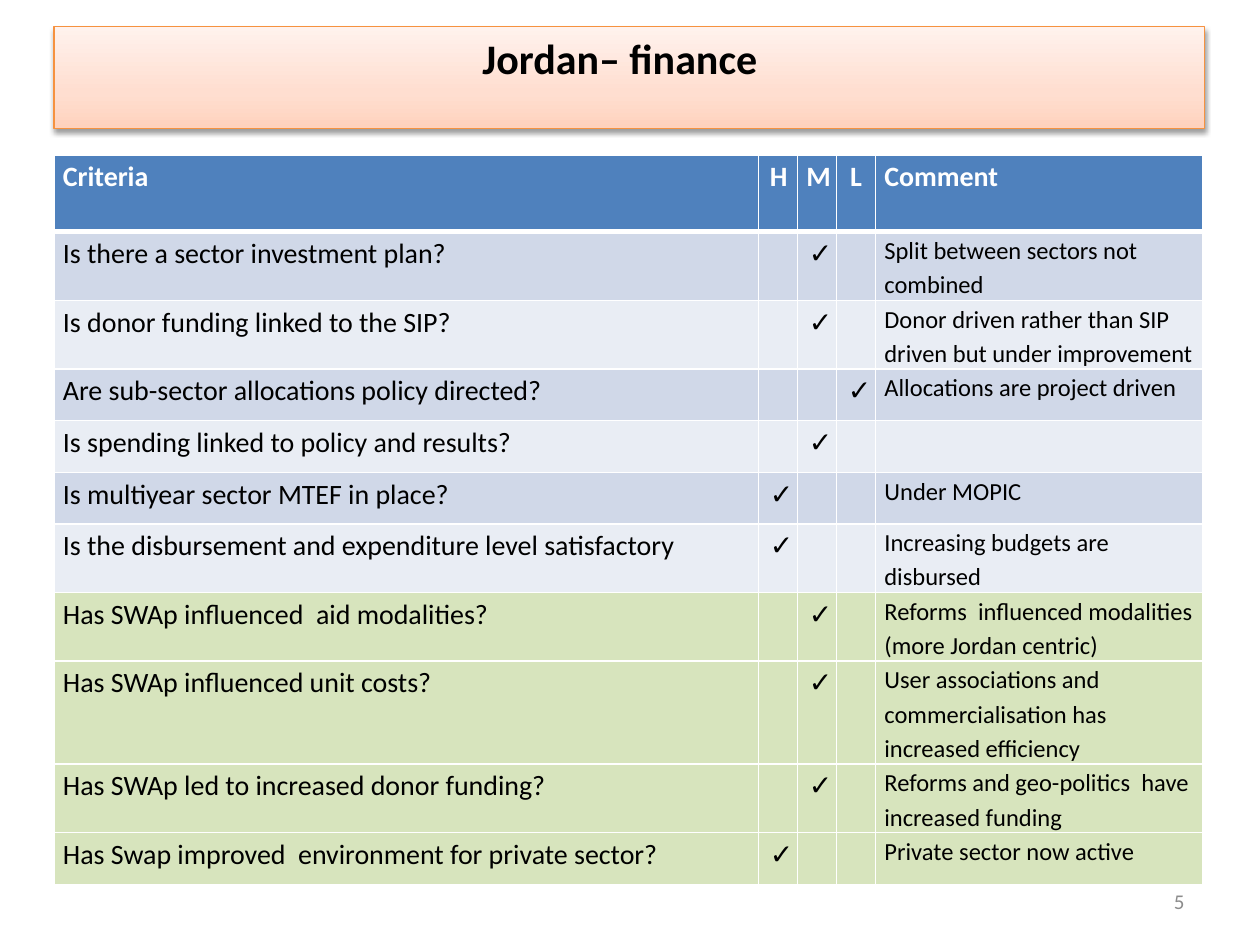
from dataclasses import dataclass
from typing import Optional

from lxml.etree import SubElement
from pptx import Presentation
from pptx.dml.color import RGBColor
from pptx.enum.shapes import MSO_SHAPE
from pptx.enum.text import MSO_ANCHOR, PP_ALIGN
from pptx.oxml import parse_xml
from pptx.oxml.ns import nsdecls, qn
from pptx.util import Inches, Pt

FONT = "Calibri"
BLACK = "000000"
WHITE = "FFFFFF"
HEADER_BLUE = "4F81BD"
BAND_BLUES = ("D0D8E8", "E9EDF4")
SWAP_GREEN = "D7E4BD"
LEVELS = ("H", "M", "L")
LEFT, WIDTH = 0.43, 9.13
COLUMN_WIDTHS = (5.59, 0.31, 0.31, 0.31, 2.6)
HEADER_HEIGHT, ROW_HEIGHT = 0.61, 0.41


@dataclass
class Style:
    size: float
    color: str = BLACK
    bold: bool = False
    alignment: Optional[PP_ALIGN] = None
    margin: float = 0
    indent: float = 0
    line_spacing: Optional[float] = None


@dataclass
class Criterion:
    question: str
    level: str
    comment: str = ""
    about_swap: bool = False


CRITERIA = [
    Criterion("Is there a sector investment plan?", "M", "Split between sectors not combined"),
    Criterion("Is donor funding linked to the SIP?", "M",
              "Donor driven rather than SIP driven but under improvement"),
    Criterion("Are sub-sector allocations policy directed?", "L", "Allocations are project driven"),
    Criterion("Is spending linked to policy and results?", "M"),
    Criterion("Is multiyear sector MTEF in place?", "H", "Under MOPIC"),
    Criterion("Is the disbursement and expenditure level satisfactory", "H",
              "Increasing budgets are disbursed"),
    Criterion("Has SWAp influenced  aid modalities?", "M",
              "Reforms  influenced modalities (more Jordan centric)", True),
    Criterion("Has SWAp influenced unit costs?", "M",
              "User associations and commercialisation has increased efficiency", True),
    Criterion("Has SWAp led to increased donor funding?", "M",
              "Reforms and geo-politics  have increased funding", True),
    Criterion("Has Swap improved  environment for private sector?", "H",
              "Private sector now active", True),
]

HEADER_STYLES = (
    Style(16, WHITE, True, None, 0.38, -0.38, 1.15),
    Style(16, WHITE, True, None, 0.02, 0, 1.15),
    Style(16, WHITE, True, PP_ALIGN.CENTER, 0.01, -0.01, 1.15),
    Style(16, WHITE, True, PP_ALIGN.CENTER, line_spacing=1.15),
    Style(16, WHITE, True, line_spacing=1.15),
)
QUESTION_STYLE = Style(16, margin=0.38, indent=-0.38, line_spacing=1.15)
TICK_STYLE = Style(16, margin=0.02, line_spacing=1.15)
COMMENT_STYLE = Style(14, line_spacing=1.15)
BODY_STYLES = (QUESTION_STYLE, *[TICK_STYLE] * len(LEVELS), COMMENT_STYLE)


def rgb(color: str) -> RGBColor:
    return RGBColor.from_string(color)


def write(text_frame, text: str, style: Style) -> None:
    paragraph = text_frame.paragraphs[0]
    if style.margin or style.indent:
        properties = paragraph._p.get_or_add_pPr()
        properties.set("marL", str(Inches(style.margin)))
        properties.set("indent", str(Inches(style.indent)))
    if style.alignment is not None:
        paragraph.alignment = style.alignment
    if style.line_spacing is not None:
        paragraph.line_spacing = style.line_spacing
    run = paragraph.add_run()
    run.text = text
    run.font.name = FONT
    run.font.size = Pt(style.size)
    run.font.bold = style.bold
    run.font.color.rgb = rgb(style.color)


def set_borders(cell, bottom_width: float) -> None:
    properties = cell._tc.get_or_add_tcPr()
    widths = {"lnL": 1, "lnR": 1, "lnT": 1, "lnB": bottom_width}
    for position, (side, width) in enumerate(widths.items()):
        properties.insert(position, parse_xml(
            f'<a:{side} {nsdecls("a")} w="{Pt(width)}"><a:solidFill>'
            f'<a:srgbClr val="{WHITE}"/></a:solidFill></a:{side}>'))


def fill_row(row, texts, styles, color: str, bottom_width: float = 1) -> None:
    for cell, text, style in zip(row.cells, texts, styles):
        cell.fill.solid()
        cell.fill.fore_color.rgb = rgb(color)
        set_borders(cell, bottom_width)
        if text:
            cell.margin_left = cell.margin_right = Inches(0.07)
            cell.margin_top = cell.margin_bottom = Inches(0)
            write(cell.text_frame, text, style)


def add_criteria_table(slide) -> None:
    height = HEADER_HEIGHT + ROW_HEIGHT * len(CRITERIA)
    table = slide.shapes.add_table(
        len(CRITERIA) + 1, len(COLUMN_WIDTHS),
        Inches(LEFT), Inches(1.23), Inches(WIDTH), Inches(height)).table
    for column, width in zip(table.columns, COLUMN_WIDTHS):
        column.width = Inches(width)
    header, *body = table.rows
    header.height = Inches(HEADER_HEIGHT)
    fill_row(header, ("Criteria", *LEVELS, "Comment"), HEADER_STYLES, HEADER_BLUE, 3)
    for index, (row, criterion) in enumerate(zip(body, CRITERIA)):
        row.height = Inches(ROW_HEIGHT)
        ticks = ["✓" if level == criterion.level else "" for level in LEVELS]
        color = SWAP_GREEN if criterion.about_swap else BAND_BLUES[index % 2]
        fill_row(row, (criterion.question, *ticks, criterion.comment), BODY_STYLES, color)


def add_title(slide) -> None:
    shape = slide.shapes.add_shape(
        MSO_SHAPE.RECTANGLE, Inches(LEFT), Inches(0.21), Inches(WIDTH), Inches(0.81))
    shape.fill.gradient()
    shape.fill.gradient_angle = 90
    stops = shape._element.spPr.find(qn("a:gradFill")).find(qn("a:gsLst"))
    for stop in list(stops):
        stops.remove(stop)
    for position, color in ((0, "FFD2BD"), (35, "FFDED0"), (100, "FFF2ED")):
        stop = SubElement(stops, qn("a:gs"), pos=str(position * 1000))
        SubElement(stop, qn("a:srgbClr"), val=color)
    shape.line.color.rgb = rgb("F69240")
    shape.line.width = Pt(0.75)
    shape.shadow.inherit = False
    effects = shape._element.spPr.find(qn("a:effectLst"))
    shadow = SubElement(effects, qn("a:outerShdw"), blurRad=str(Pt(3.1)),
                        dist=str(Pt(1.6)), dir="5400000", rotWithShape="0")
    shadow_color = SubElement(shadow, qn("a:srgbClr"), val=BLACK)
    SubElement(shadow_color, qn("a:alpha"), val="38000")
    text_frame = shape.text_frame
    text_frame.word_wrap = True
    text_frame.vertical_anchor = MSO_ANCHOR.TOP
    write(text_frame, "Jordan– finance  ", Style(24, bold=True, alignment=PP_ALIGN.CENTER))


def add_page_number(slide) -> None:
    text_frame = slide.shapes.add_textbox(
        Inches(7.17), Inches(6.95), Inches(2.33), Inches(0.4)).text_frame
    text_frame.word_wrap = True
    text_frame.vertical_anchor = MSO_ANCHOR.MIDDLE
    write(text_frame, "5", Style(12, "8C8C8C", alignment=PP_ALIGN.RIGHT))


def main() -> None:
    presentation = Presentation()
    presentation.slide_width = Inches(10)
    presentation.slide_height = Inches(7.5)
    slide = presentation.slides.add_slide(presentation.slide_layouts[6])
    add_criteria_table(slide)
    add_title(slide)
    add_page_number(slide)
    presentation.save("out.pptx")


if __name__ == "__main__":
    main()
